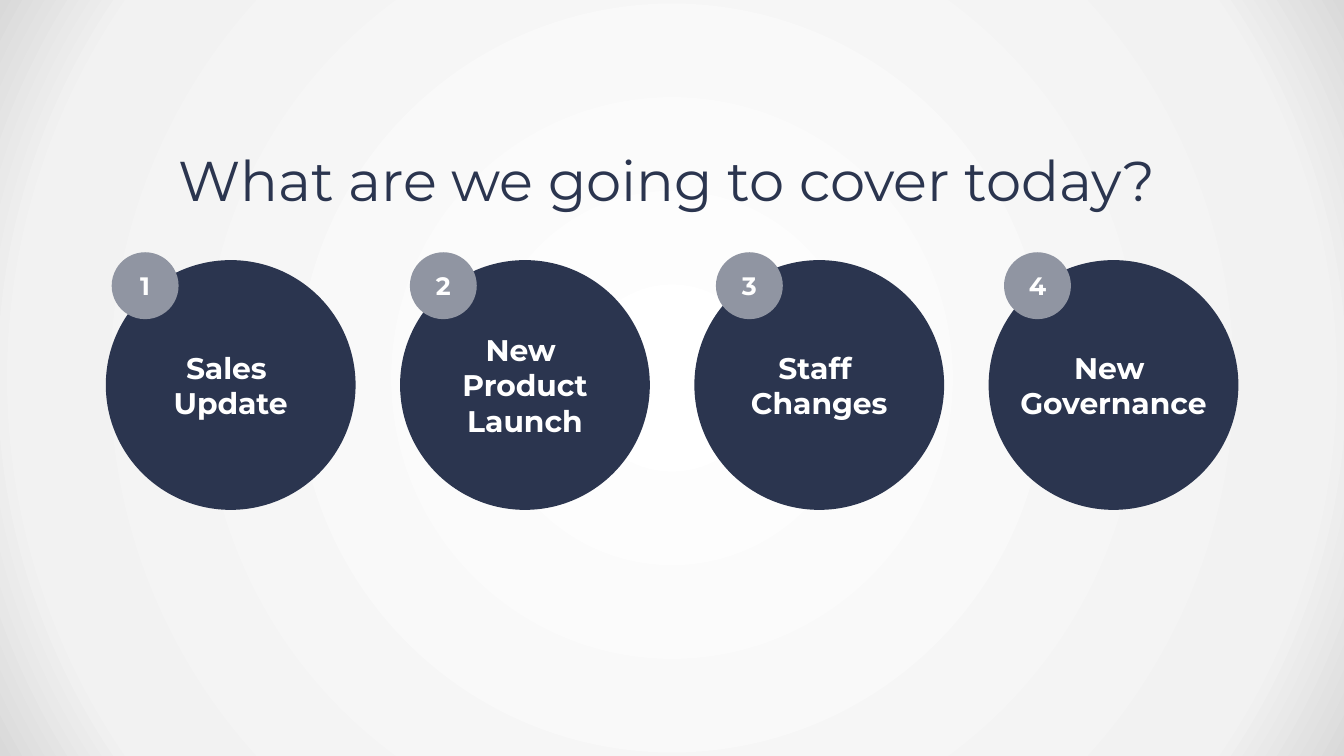
from lxml import etree
from pptx import Presentation
from pptx.dml.color import RGBColor
from pptx.enum.shapes import MSO_SHAPE as Shape
from pptx.enum.text import MSO_ANCHOR as Anchor, MSO_AUTO_SIZE as AutoSize, PP_ALIGN as Align
from pptx.oxml import parse_xml
from pptx.oxml.ns import nsdecls, qn
from pptx.util import Pt

NAVY = RGBColor(0x2B, 0x35, 0x4F)
GREY = RGBColor(0x90, 0x95, 0xA2)
WHITE = RGBColor(0xFF, 0xFF, 0xFF)
PALE = RGBColor(0xF2, 0xF2, 0xF2)
SILVER = RGBColor(0xD9, 0xD9, 0xD9)

SLIDE_WIDTH, SLIDE_HEIGHT = 960, 540


class AgendaSlide:
    font = "Montserrat"

    def __init__(self, deck):
        self.slide = deck.slides.add_slide(deck.slide_layouts[5])

    def backdrop(self, stops):
        """Fill the background with a gradient that spreads from the centre."""
        self.slide.background.fill.gradient()
        gradient = self.slide.element.find(".//" + qn("a:gradFill"))
        for child in list(gradient):
            gradient.remove(child)
        colours = etree.SubElement(gradient, qn("a:gsLst"))
        for percent, colour in stops:
            stop = etree.SubElement(colours, qn("a:gs"), pos=str(percent * 1000))
            etree.SubElement(stop, qn("a:srgbClr"), val=str(colour))
        gradient.append(parse_xml(
            f'<a:path {nsdecls("a")} path="circle">'
            '<a:fillToRect l="50000" t="50000" r="50000" b="50000"/></a:path>'))

    def label(self, shape, text, size, colour, bold, wrap, insets=(0, 0, 0, 0)):
        frame = shape.text_frame
        frame.auto_size = AutoSize.NONE
        frame.word_wrap = wrap
        frame.vertical_anchor = Anchor.MIDDLE
        (frame.margin_left, frame.margin_top,
         frame.margin_right, frame.margin_bottom) = map(Pt, insets)
        paragraph = frame.paragraphs[0]
        paragraph.text = text
        paragraph.alignment = Align.CENTER
        font = paragraph.font
        font.name, font.size, font.bold = self.font, Pt(size), bold
        font.color.rgb = colour
        return paragraph

    def title(self, text, top, height):
        heading = self.slide.shapes.title
        heading.left, heading.top = Pt(0), Pt(top)
        heading.width, heading.height = Pt(SLIDE_WIDTH), Pt(height)
        paragraph = self.label(heading, text, 40, NAVY, False, True, (0, 3.6, 7.2, 3.6))
        paragraph.line_spacing = 0.9

    def disc(self, left, top, diameter, fill, text, size, wrap):
        disc = self.slide.shapes.add_shape(
            Shape.OVAL, Pt(left), Pt(top), Pt(diameter), Pt(diameter))
        disc.shadow.inherit = False
        disc.fill.solid()
        disc.fill.fore_color.rgb = fill
        disc.line.fill.background()
        self.label(disc, text, size, WHITE, True, wrap)


def main():
    deck = Presentation()
    deck.slide_width, deck.slide_height = Pt(SLIDE_WIDTH), Pt(SLIDE_HEIGHT)
    agenda = AgendaSlide(deck)

    # Background and heading
    agenda.backdrop([(0, WHITE), (85, PALE), (100, SILVER)])
    agenda.title("What are we going to cover today?", 100.8, 59.8)

    # Topics
    topics = ["Sales \nUpdate", "New \nProduct\n Launch ",
              "Staff \nChanges", "New \nGovernance"]
    for index, topic in enumerate(topics):
        agenda.disc(75.6 + 210.2 * index, 185.8, 178.4, NAVY, topic, 21.3, False)

    # Number badges
    for number, left in enumerate([79.8, 292.8, 511.4, 717.2], start=1):
        agenda.disc(left, 180.2, 47.8, GREY, str(number), 18, True)

    deck.save("out.pptx")


if __name__ == "__main__":
    main()
